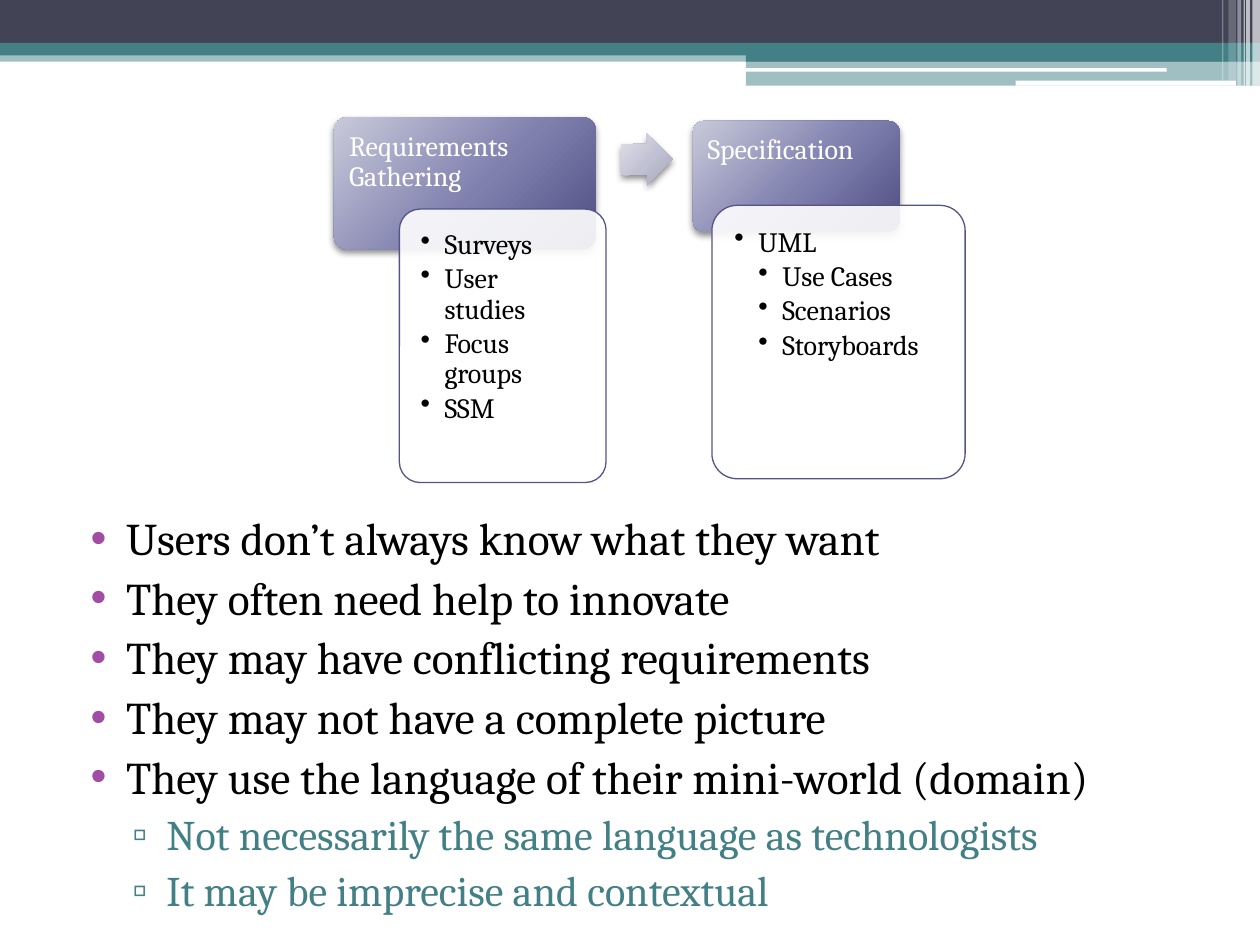
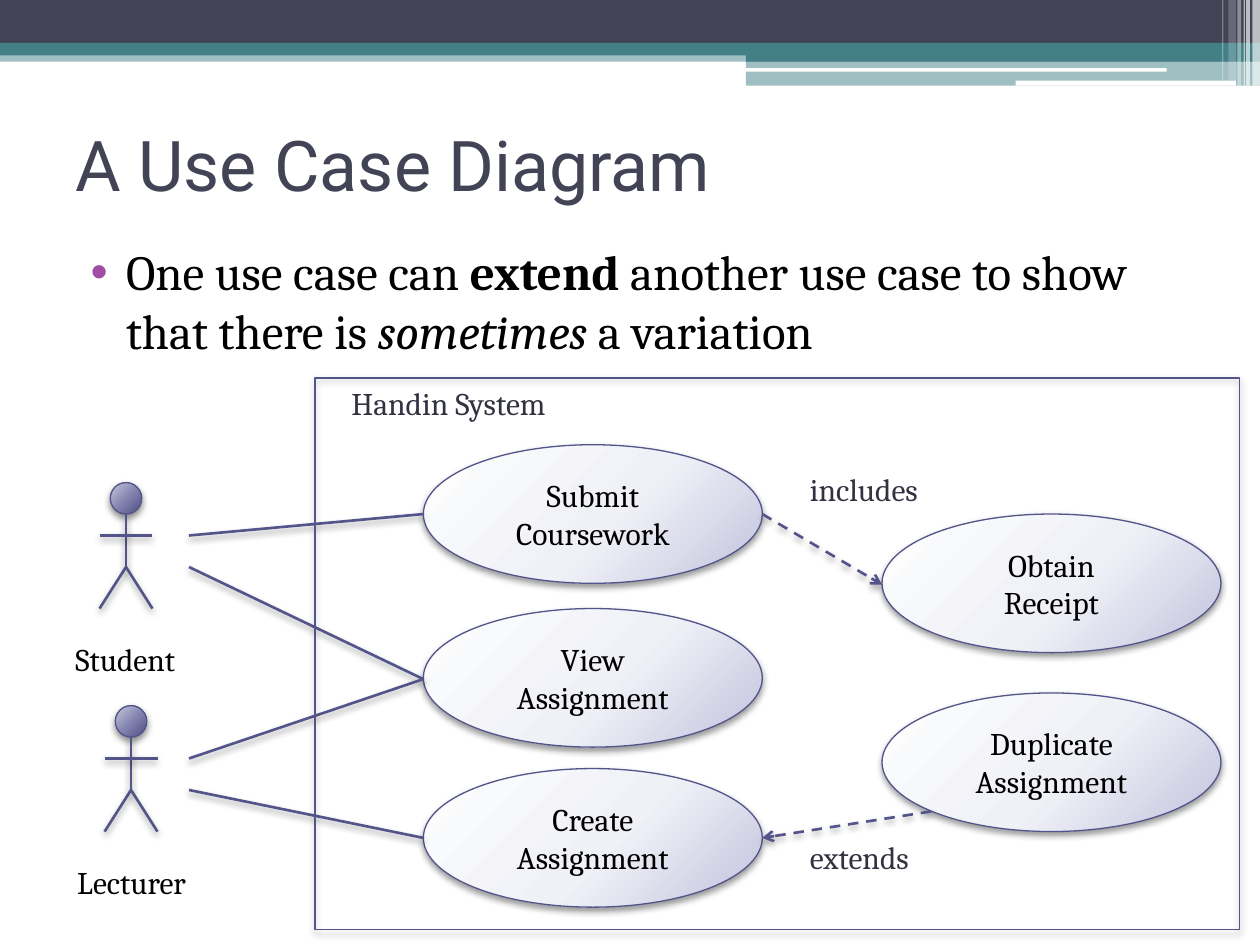
from pptx import Presentation
from pptx.dml.color import RGBColor
from pptx.enum.dml import MSO_LINE
from pptx.enum.shapes import MSO_CONNECTOR, MSO_SHAPE
from pptx.enum.text import MSO_ANCHOR, MSO_AUTO_SIZE, PP_ALIGN
from pptx.oxml import parse_xml
from pptx.oxml.ns import nsdecls, qn
from pptx.util import Inches, Pt

NAVY, TEAL, INDIGO, PURPLE = "424456", "438086", "53548A", "A04DA3"
WHITE, BLACK, LABEL = "FFFFFF", "000000", "323341"
DARK_BLEND = ("C9C9DA", "7F80AE", "4D4E81")
ARROW_BLEND = ("E1E1EA", "C0C0D3", "A7A7B7")
PALE_BLEND = ("FEFEFE", "F0F1F7", "C2C2DD")
HEADING, TEXT = "Roboto", "Cambria"


def paint(shape, fill=None, alpha=100, line=None, width=0.75, shadow=0):
    properties = shape.element.spPr
    if isinstance(fill, tuple):
        stops = "".join(
            f'<a:gs pos="{pos}000"><a:srgbClr val="{colour}"/></a:gs>'
            for pos, colour in zip((0, 55, 100), fill))
        properties.append(parse_xml(
            f'<a:gradFill {nsdecls("a")} rotWithShape="1"><a:gsLst>{stops}</a:gsLst>'
            '<a:path path="circle"><a:fillToRect l="-40000" t="-90000" r="140000" b="190000"/>'
            '</a:path></a:gradFill>'))
    elif fill:
        shape.fill.solid()
        shape.fill.fore_color.rgb = RGBColor.from_string(fill)
        properties.find(qn("a:solidFill"))[0].append(
            parse_xml(f'<a:alpha {nsdecls("a")} val="{alpha}000"/>'))
    elif hasattr(shape, "fill"):
        shape.fill.background()
    if line:
        shape.line.color.rgb = RGBColor.from_string(line)
        shape.line.width = Pt(width)
    else:
        shape.line.fill.background()
    blur = (f'<a:outerShdw blurRad="50800" dist="25400" dir="5400000" rotWithShape="0">'
            f'<a:srgbClr val="{BLACK}"><a:alpha val="{shadow}000"/></a:srgbClr>'
            '</a:outerShdw>') if shadow else ""
    properties.append(parse_xml(f'<a:effectLst {nsdecls("a")}>{blur}</a:effectLst>'))


def write(shape, lines, size, colour, font=TEXT, frame_format=None, bullet=None, **line_format):
    frame = shape.text_frame
    for name, value in {"word_wrap": True, **(frame_format or {})}.items():
        setattr(frame, name, value)
    for number, line in enumerate(lines):
        paragraph = frame.paragraphs[0] if number == 0 else frame.add_paragraph()
        level, runs = line if isinstance(line, tuple) else (0, line)
        ink, points = colour, size
        for name, value in line_format.items():
            setattr(paragraph, name, value)
        if bullet:
            left, hanging, mark, mark_colour, ink, points = bullet[level]
            paragraph.level = level
            properties = paragraph._p.get_or_add_pPr()
            properties.set("marL", str(Inches(left)))
            properties.set("indent", str(-Inches(hanging)))
            properties.append(parse_xml(
                f'<a:buClr {nsdecls("a")}><a:srgbClr val="{mark_colour}"/></a:buClr>'))
            properties.append(parse_xml(f'<a:buChar {nsdecls("a")} char="{mark}"/>'))
        for text, style in ([(runs, {})] if isinstance(runs, str) else runs):
            run = paragraph.add_run()
            run.text = text
            run.font.color.rgb = RGBColor.from_string(ink)
            for name, value in {"name": font, "size": Pt(points), **style}.items():
                setattr(run.font, name, value)


deck = Presentation()
deck.slide_width, deck.slide_height = Inches(10), Inches(7.5)
requirements = deck.slides.add_slide(deck.slide_layouts[1])
use_cases = deck.slides.add_slide(deck.slide_layouts[1])

bands = [
    (0, 0.4, 10, 0.09, TEAL, 50),
    (0, 0, 10, 0.34, NAVY, 100),
    (0, 0.34, 10, 0.1, TEAL, 100),
    (5.92, 0.39, 4.08, 0.1, TEAL, 100),
    (5.92, 0.48, 4.08, 0.2, TEAL, 50),
    (5.91, 0.54, 3.35, 0.03, WHITE, 100),
    (8.06, 0.64, 1.75, 0.04, WHITE, 100),
    (9.94, 0, 0.06, 0.68, WHITE, 65),
    (9.89, 0, 0.03, 0.68, WHITE, 65),
    (9.87, 0, 0.01, 0.68, WHITE, 60),
    (9.82, 0, 0.03, 0.68, WHITE, 40),
    (9.75, 0, 0.06, 0.64, WHITE, 20),
    (9.7, 0, 0.01, 0.64, WHITE, 30),
]
master_tree = deck.slide_master.shapes.element
for depth, (*box, colour, alpha) in enumerate(bands):
    band = requirements.shapes.add_shape(MSO_SHAPE.RECTANGLE, *map(Inches, box))
    paint(band, colour, alpha)
    master_tree.insert(2 + depth, band.element)

body_bullets = [(0.4, 0.28, "•", PURPLE, BLACK, 25.9), (0.72, 0.27, "▫", TEAL, TEAL, 24.1)]
card_bullets = [(0.19 * step, 0.19, "•", BLACK, BLACK, 16) for step in (1, 2)]
body_frame = {"auto_size": MSO_AUTO_SIZE.NONE, "vertical_anchor": MSO_ANCHOR.TOP}

stages = [
    ("Requirements Gathering", (2.65, 0.93, 2.08, 1.05), (3.17, 1.66, 1.64, 2.17),
     ["Surveys", "User studies", "Focus groups", "SSM"]),
    ("Specification", (5.5, 0.96, 1.64, 0.88), (5.65, 1.63, 2.01, 2.17),
     ["UML", (1, "Use Cases"), (1, "Scenarios"), (1, "Storyboards")]),
]
for stage, heading_box, detail_box, details in stages:
    heading = requirements.shapes.add_shape(MSO_SHAPE.ROUNDED_RECTANGLE, *map(Inches, heading_box))
    detail = requirements.shapes.add_shape(MSO_SHAPE.ROUNDED_RECTANGLE, *map(Inches, detail_box))
    paint(heading, DARK_BLEND, shadow=45)
    paint(detail, WHITE, 90, INDIGO)
    for card, lines, inset, after, bullet in (
            (heading, [stage], 0.09, 5.6, None), (detail, details, 0.12, 2.4, card_bullets)):
        card.adjustments[0] = 0.1
        margins = {f"margin_{side}": Inches(inset) for side in ("left", "top", "right", "bottom")}
        write(card, lines, 16, WHITE, bullet=bullet,
              frame_format={"vertical_anchor": MSO_ANCHOR.TOP, **margins},
              alignment=PP_ALIGN.LEFT, line_spacing=0.9, space_after=Pt(after))

next_stage = requirements.shapes.add_shape(
    MSO_SHAPE.RIGHT_ARROW, *map(Inches, (4.93, 1.06, 0.41, 0.41)))
next_stage.adjustments[0] = 0.6
next_stage.rotation = 359.4
paint(next_stage, ARROW_BLEND, shadow=45)

unused_title = requirements.shapes.title.element
unused_title.getparent().remove(unused_title)

title = use_cases.shapes.title
write(title, ["A Use Case Diagram"], 40, NAVY, HEADING,
      {"auto_size": MSO_AUTO_SIZE.NONE, "vertical_anchor": MSO_ANCHOR.MIDDLE},
      alignment=PP_ALIGN.LEFT)
user_issues, extend_rule = requirements.placeholders[1], use_cases.placeholders[1]
for holder, box in (
        (title, (0.5, 0.71, 9, 1.17)),
        (user_issues, (0.5, 4, 9.08, 3.5)),
        (extend_rule, (0.5, 1.87, 9, 4.73))):
    for side, length in zip(("left", "top", "width", "height"), box):
        setattr(holder, side, Inches(length))

write(user_issues, [
    "Users don’t always know what they want",
    "They often need help to innovate",
    "They may have conflicting requirements",
    "They may not have a complete picture",
    "They use the language of their mini-world (domain)",
    (1, "Not necessarily the same language as technologists"),
    (1, "It may be imprecise and contextual"),
], 25.9, BLACK, frame_format=body_frame, bullet=body_bullets, space_before=Pt(3))
write(extend_rule, [[
    ("One use case can ", {}),
    ("extend ", {"bold": True}),
    ("another use case to show that there is ", {}),
    ("sometimes", {"italic": True}),
    (" a variation", {}),
]], 28, BLACK, frame_format=body_frame,
    bullet=[(0.4, 0.28, "•", PURPLE, BLACK, 28)], space_before=Pt(3))

strokes = [
    (1.5, 4.25, 3.36, 4.08, False),
    (1.5, 4.5, 3.36, 5.39, False),
    (1.5, 6.02, 3.36, 5.39, False),
    (1.5, 6.27, 3.36, 6.65, False),
    (6.05, 4.08, 7, 4.64, True),
    (7.39, 6.44, 6.05, 6.65, True),
]
for x, y in ((1, 3.83), (1.04, 5.6)):
    head = use_cases.shapes.add_shape(
        MSO_SHAPE.OVAL, Inches(x - 0.125), Inches(y), Inches(0.25), Inches(0.25))
    paint(head, DARK_BLEND, line=INDIGO, shadow=45)
    strokes += [
        (x, y + 0.25, x, y + 0.67, False),
        (x - 0.21, y + 0.42, x + 0.21, y + 0.42, False),
        (x, y + 0.67, x - 0.21, y + 1, False),
        (x, y + 0.67, x + 0.21, y + 1, False),
    ]

cases = [
    (3.36, 3.53, ["Submit Coursework"]),
    (3.36, 4.83, ["View Assignment"]),
    (3.36, 6.1, ["Create Assignment"]),
    (7, 5.5, ["Duplicate Assignment"]),
    (7, 4.08, ["Obtain", "Receipt"]),
]
for x, y, case in cases:
    oval = use_cases.shapes.add_shape(MSO_SHAPE.OVAL, *map(Inches, (x, y, 2.69, 1.1)))
    paint(oval, PALE_BLEND, line=INDIGO, shadow=40)
    write(oval, case, 18, BLACK, alignment=PP_ALIGN.CENTER)

for *ends, dependency in strokes:
    stroke = use_cases.shapes.add_connector(MSO_CONNECTOR.STRAIGHT, *map(Inches, ends))
    paint(stroke, line=INDIGO, width=1.5, shadow=40)
    if dependency:
        stroke.line.dash_style = MSO_LINE.DASH
        stroke.line._get_or_add_ln().append(
            parse_xml(f'<a:tailEnd {nsdecls("a")} type="arrow"/>'))

boundary = use_cases.shapes.add_shape(MSO_SHAPE.RECTANGLE, *map(Inches, (2.5, 3, 7.34, 4.38)))
paint(boundary, line=INDIGO, shadow=40)

captions = [
    ("Student", 0.16, 5.03, 1.67, BLACK, PP_ALIGN.CENTER, True),
    ("Lecturer", 0.21, 6.8, 1.67, BLACK, PP_ALIGN.CENTER, True),
    ("Handin System", 2.5, 3, 2.12, LABEL, PP_ALIGN.CENTER, True),
    ("extends", 6.33, 6.6, 1.06, LABEL, PP_ALIGN.LEFT, False),
    ("includes", 6.33, 3.68, 1.13, LABEL, PP_ALIGN.LEFT, False),
]
for words, x, y, width, colour, alignment, wrap in captions:
    caption = use_cases.shapes.add_textbox(*map(Inches, (x, y, width, 0.4)))
    write(caption, [words], 18, colour, frame_format={"word_wrap": wrap}, alignment=alignment)

deck.save("out.pptx")
